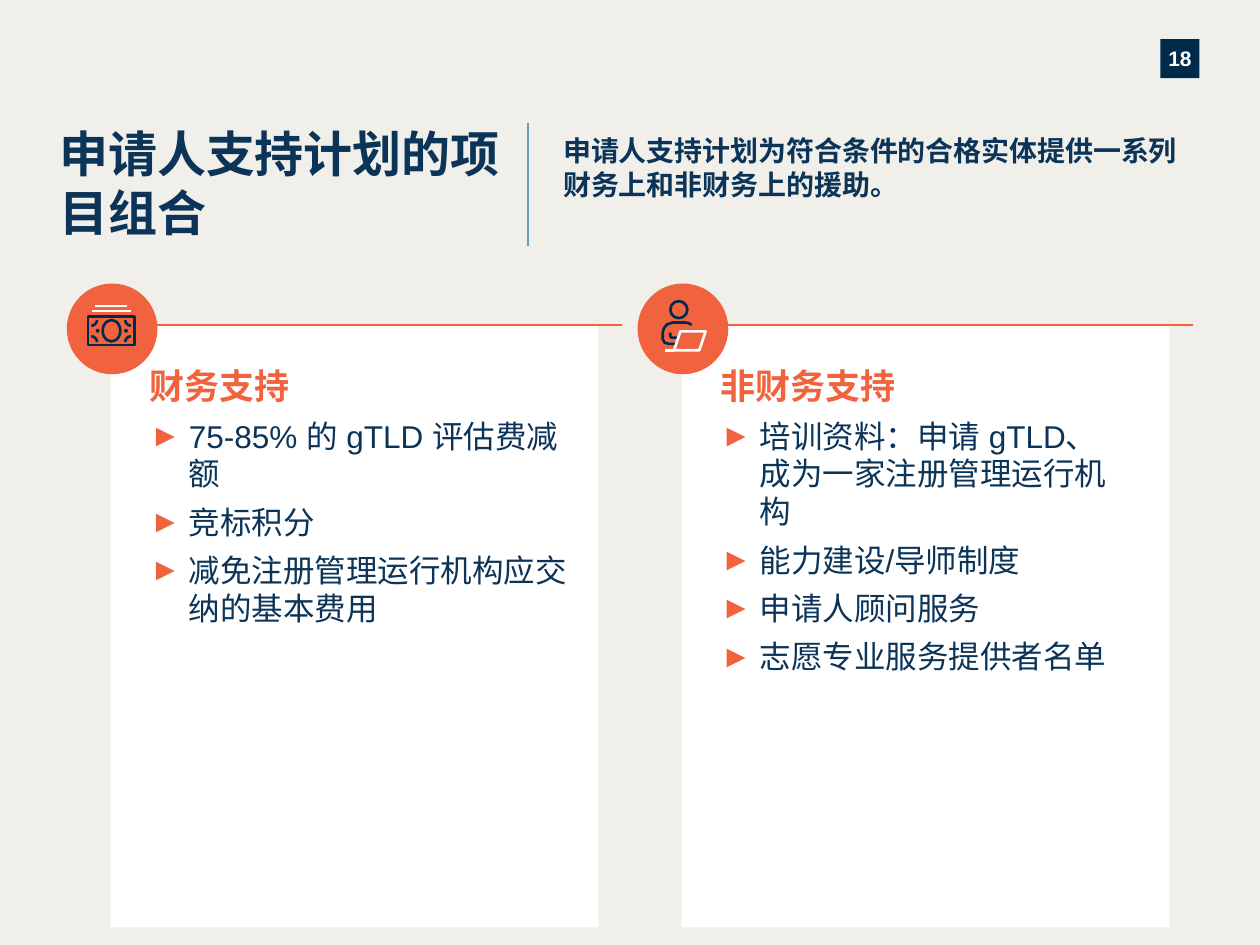
"""Build the slide on the financial and non-financial parts of applicant support."""
from dataclasses import dataclass
from math import cos, pi, sin

from lxml import etree
from pptx import Presentation
from pptx.dml.color import RGBColor
from pptx.enum.shapes import MSO_CONNECTOR, MSO_SHAPE
from pptx.enum.text import MSO_ANCHOR, PP_ALIGN
from pptx.oxml.ns import qn
from pptx.util import Inches, Pt

RECTANGLE, OVAL = MSO_SHAPE.RECTANGLE, MSO_SHAPE.OVAL
STRAIGHT = MSO_CONNECTOR.STRAIGHT
TOP, MIDDLE = MSO_ANCHOR.TOP, MSO_ANCHOR.MIDDLE
LEFT, CENTER = PP_ALIGN.LEFT, PP_ALIGN.CENTER


@dataclass(frozen=True)
class Theme:
    font: str = "Arial"
    paper: str = "F1EFEA"
    white: str = "FFFFFF"
    navy: str = "0B3458"
    dark: str = "002B49"
    badge: str = "002A49"
    orange: str = "F1633E"
    blue: str = "6D99B3"
    title: int = 28
    heading: int = 20
    body: int = 18
    lead: int = 16
    number: int = 12
    rule: float = 1.25
    stroke: float = 1.5


theme = Theme()
presentation = Presentation()
presentation.slide_width, presentation.slide_height = Inches(10), Inches(7.5)
CELL = presentation.slide_width // 100


def add_run(paragraph, text, size, color, bold=True):
    """Add one formatted run to a paragraph."""
    run = paragraph.add_run()
    run.text = text
    run.font.name, run.font.size, run.font.bold = theme.font, Pt(size), bold
    run.font.color.rgb = RGBColor.from_string(color)
    etree.SubElement(run.font._element, qn("a:ea"), typeface=theme.font)


def add_line(shapes, ends, color, width):
    """Add a straight line between two grid points."""
    line = shapes.add_connector(STRAIGHT, *[round(end * CELL) for end in ends])
    line.line.color.rgb = RGBColor.from_string(color)
    line.line.width = Pt(width)
    etree.SubElement(line._element.spPr, qn("a:effectLst"))


slide = presentation.slides.add_slide(presentation.slide_layouts[5])
slide.background.fill.solid()
slide.background.fill.fore_color.rgb = RGBColor.from_string(theme.paper)

title = slide.shapes.title
lead = slide.shapes.add_textbox(0, 0, 0, 0)
badge = slide.shapes.add_shape(RECTANGLE, 0, 0, 0, 0)
badge.shadow.inherit = False
badge.fill.solid()
badge.fill.fore_color.rgb = RGBColor.from_string(theme.badge)
badge.line.fill.background()

labels = [
    (title, (4.7, 9.8, 38.7, 9.2), "申请人支持计划的项目组合", theme.title, theme.navy, TOP, LEFT),
    (lead, (44.7, 10.6, 49.4, 8.1), "申请人支持计划为符合条件的合格实体提供一系列财务上和非财务上的援助。",
     theme.lead, theme.navy, TOP, LEFT),
    (badge, (92.1, 3.1, 3.1, 3.1), "18", theme.number, theme.white, MIDDLE, CENTER),
]
for shape, box, text, size, color, anchor, alignment in labels:
    shape.left, shape.top, shape.width, shape.height = [round(side * CELL) for side in box]
    frame = shape.text_frame
    frame.margin_left = frame.margin_top = frame.margin_right = frame.margin_bottom = 0
    frame.word_wrap, frame.vertical_anchor = True, anchor
    frame.paragraphs[0].alignment = alignment
    add_run(frame.paragraphs[0], text, size, color)
add_line(slide.shapes, (41.9, 9.8, 41.9, 19.5), theme.blue, theme.rule)

CARD_LEFT, CARD_TOP, CARD_STEP = 8.8, 25.8, 45.3
INDENT = round(3.1 * CELL)
cards = [
    ("财务支持", 2.4, ["75-85% 的 gTLD 评估费减额", "竞标积分", "减免注册管理运行机构应交纳的基本费用"]),
    ("非财务支持", 3.5, ["培训资料：申请 gTLD、成为一家注册管理运行机构", "能力建设/导师制度",
                    "申请人顾问服务", "志愿专业服务提供者名单"]),
]
for column, (heading, right_margin, items) in enumerate(cards):
    left = CARD_LEFT + column * CARD_STEP
    card_box = (left, CARD_TOP, 38.7, 47.8)
    circle_box = (left - 3.5, CARD_TOP - 3.3, 7.2, 7.2)
    card = slide.shapes.add_shape(RECTANGLE, *[round(side * CELL) for side in card_box])
    add_line(slide.shapes, (left, CARD_TOP, left + 40.6, CARD_TOP), theme.orange, theme.rule)
    circle = slide.shapes.add_shape(OVAL, *[round(side * CELL) for side in circle_box])
    for shape, color in ((card, theme.white), (circle, theme.orange)):
        shape.shadow.inherit = False
        shape.fill.solid()
        shape.fill.fore_color.rgb = RGBColor.from_string(color)
        shape.line.fill.background()
    frame = card.text_frame
    frame.word_wrap, frame.vertical_anchor = True, TOP
    frame.margin_left = frame.margin_top = frame.margin_bottom = INDENT
    frame.margin_right = round(right_margin * CELL)
    frame.paragraphs[0].alignment = LEFT
    add_run(frame.paragraphs[0], heading, theme.heading, theme.orange)
    for item in items:
        paragraph = frame.add_paragraph()
        properties = paragraph._p.get_or_add_pPr()
        properties.set("marL", str(INDENT))
        properties.set("indent", str(-INDENT))
        bullet_color = etree.SubElement(properties, qn("a:buClr"))
        etree.SubElement(bullet_color, qn("a:srgbClr"), val=theme.orange)
        etree.SubElement(properties, qn("a:buFont"), typeface=theme.font)
        etree.SubElement(properties, qn("a:buChar"), char="►")
        paragraph.alignment, paragraph.space_before = LEFT, Pt(6)
        add_run(paragraph, item, theme.body, theme.navy, bold=False)

QUARTER = [step * pi / 12 for step in range(7)]
bill_corners = [
    [(x + toward_x * 0.45 * cos(angle), y + toward_y * 0.45 * sin(angle)) for angle in QUARTER]
    for x, toward_x in ((7.25, 1), (10.4, -1))
    for y, toward_y in ((25.4, 1), (27.15, -1))
]
arm = [(53.8, 26.8), (53.3, 26.8), (53.2, 26.7), (53.2, 26.4)]
torso = [(54.9, 25.8), (54.65, 25.65), (54.4, 25.6), (53.4, 25.6), (52.95, 25.75),
         (52.7, 26.05), (52.6, 26.4), (52.6, 26.9), (52.75, 27.2), (53.1, 27.3), (53.7, 27.3)]
laptop = [(54, 26.3), (53.5, 27.8), (55.5, 27.8), (56, 26.3)]
icons = [
    ([(RECTANGLE, (7, 25.1, 3.7, 2.3)), (OVAL, (8.15, 25.4, 1.4, 1.7)),
      (OVAL, (7.7, 26.2, 0.1, 0.1)), (OVAL, (9.95, 26.2, 0.1, 0.1))],
     [(corner, theme.dark, False) for corner in bill_corners],
     [(7.3, 24.7, 10.4, 24.7), (7.5, 24.3, 10.1, 24.3)]),
    ([(OVAL, (53.2, 23.9, 1.35, 1.35))],
     [(arm, theme.dark, False), (torso, theme.dark, False), (laptop, theme.white, True)],
     [(52.8, 27.8, 53.5, 27.8)]),
]
for presets, outlines, lines in icons:
    group = slide.shapes.add_group_shape()
    strokes = [
        (group.shapes.add_shape(kind, *[round(side * CELL) for side in box]), theme.dark)
        for kind, box in presets
    ]
    for points, color, closed in outlines:
        corners = [(round(x * CELL), round(y * CELL)) for x, y in points]
        builder = group.shapes.build_freeform(*corners[0])
        builder.add_line_segments(corners[1:], close=closed)
        strokes.append((builder.convert_to_shape(), color))
    for shape, color in strokes:
        shape.shadow.inherit = False
        shape.fill.background()
        shape.line.color.rgb = RGBColor.from_string(color)
        shape.line.width = Pt(theme.stroke)
    for ends in lines:
        add_line(group.shapes, ends, theme.white, theme.stroke)

presentation.save("out.pptx")
